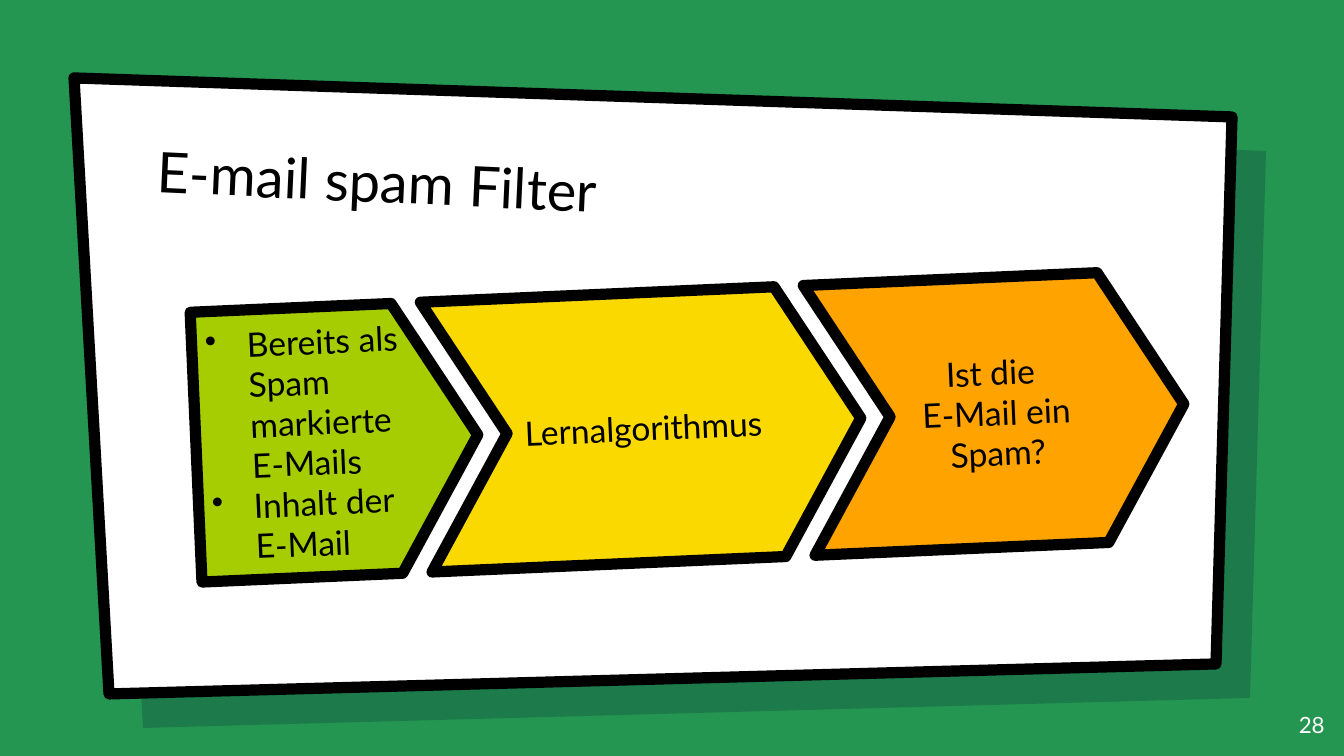
import math
from pptx import Presentation, util as u
from pptx.dml.color import RGBColor
from pptx.enum import shapes, text
from pptx.oxml.ns import qn
from lxml import etree

PX = 914400 / 134.4
BLACK, WHITE = "000000", "FFFFFF"
FONT = "Lato"
TITLE = "E-mail spam Filter"
NUMBER = "28"
PANEL = [(74, 78), (1232, 117), (1216, 664), (109, 694)]
SHADOW_OFFSET = 34
STEPS = [
    ("PENTAGON", 282, "A6CD02", True,
     ["Bereits als Spam markierte E-Mails", "Inhalt der E-Mail"]),
    ("CHEVRON", 435, "FAD900", False, ["Lernalgorithmus"]),
    ("CHEVRON", 375, "FFA300", False, ["Ist die ", "E-Mail ein Spam?"]),
]
LEFT, TOP, HEIGHT, OVERLAP, TILT = 196, 306, 270, 52, -2.5


def px(*values):
    return [u.Emu(round(v * PX)) for v in values]


def rgb(color):
    return RGBColor.from_string(color)


def paint(sp, fill, line=None):
    sp.shadow.inherit = False
    sp.fill.solid()
    sp.fill.fore_color.rgb = rgb(fill)
    if line:
        sp.line.color.rgb = rgb(line)
        sp.line.width = u.Pt(6)
    else:
        sp.line.fill.background()


def add_panel(s, offset, fill, line=None):
    points = [px(x + offset, y + offset) for x, y in PANEL]
    fb = s.shapes.build_freeform(*points[0])
    fb.add_line_segments(points[1:], close=True)
    sp = fb.convert_to_shape()
    paint(sp, fill, line)
    return sp


def add_bullet(p):
    pPr = p._p.get_or_add_pPr()
    indent = px(42)[0]
    pPr.set("marL", str(indent))
    pPr.set("indent", str(-indent))
    color = etree.SubElement(pPr, qn("a:buClr"))
    etree.SubElement(color, qn("a:srgbClr"), val=BLACK)
    etree.SubElement(pPr, qn("a:buChar"), char="•")


def write(sp, lines, size, color, anchor, align, bullets=False):
    tf = sp.text_frame
    tf.word_wrap = True
    tf.auto_size = text.MSO_AUTO_SIZE.NONE
    tf.vertical_anchor = anchor
    tf.margin_left = tf.margin_right = tf.margin_top = tf.margin_bottom = u.Inches(0.1)
    for i, line in enumerate(lines):
        p = tf.add_paragraph() if i else tf.paragraphs[0]
        p.alignment = align
        p.line_spacing = 1.0
        p.space_before = p.space_after = u.Pt(0)
        if bullets:
            add_bullet(p)
        r = p.add_run()
        r.text = line
        r.font.name = FONT
        r.font.size = u.Pt(size)
        r.font.color.rgb = rgb(color)


prs = Presentation()
prs.slide_width, prs.slide_height = px(1344, 756)
s = prs.slides.add_slide(prs.slide_layouts[5])
s.background.fill.solid()
s.background.fill.fore_color.rgb = rgb("249651")

shadow = add_panel(s, SHADOW_OFFSET, "001936")
tint = shadow._element.spPr.find(qn("a:solidFill")).find(qn("a:srgbClr"))
etree.SubElement(tint, qn("a:alpha"), val="22000")
add_panel(s, 0, WHITE, BLACK)

placed = []
x = LEFT
for step in STEPS:
    shift = x + step[1] / 2 - LEFT - STEPS[0][1] / 2
    placed.append((x, TOP + shift * math.tan(math.radians(TILT)), step))
    x += step[1] - OVERLAP

for x, y, (kind, width, fill, bullets, lines) in reversed(placed):
    sp = s.shapes.add_shape(shapes.MSO_SHAPE[kind], *px(x, y, width, HEIGHT))
    sp.adjustments[0] = 0.3
    sp.rotation = TILT
    paint(sp, fill, BLACK)
    align = text.PP_ALIGN.LEFT if bullets else text.PP_ALIGN.CENTER
    write(sp, lines, 18, BLACK, text.MSO_ANCHOR.MIDDLE, align, bullets)

title = s.shapes.title
title.left, title.top, title.width, title.height = px(144, 129, 1034, 112)
title.rotation = 2.7
write(title, [TITLE], 30, BLACK, text.MSO_ANCHOR.BOTTOM, text.PP_ALIGN.LEFT)
s.shapes._spTree.append(title._element)

number = s.shapes.add_textbox(*px(1258, 698, 80, 58))
write(number, [NUMBER], 12, WHITE, text.MSO_ANCHOR.TOP, text.PP_ALIGN.RIGHT)

prs.save("out.pptx")
